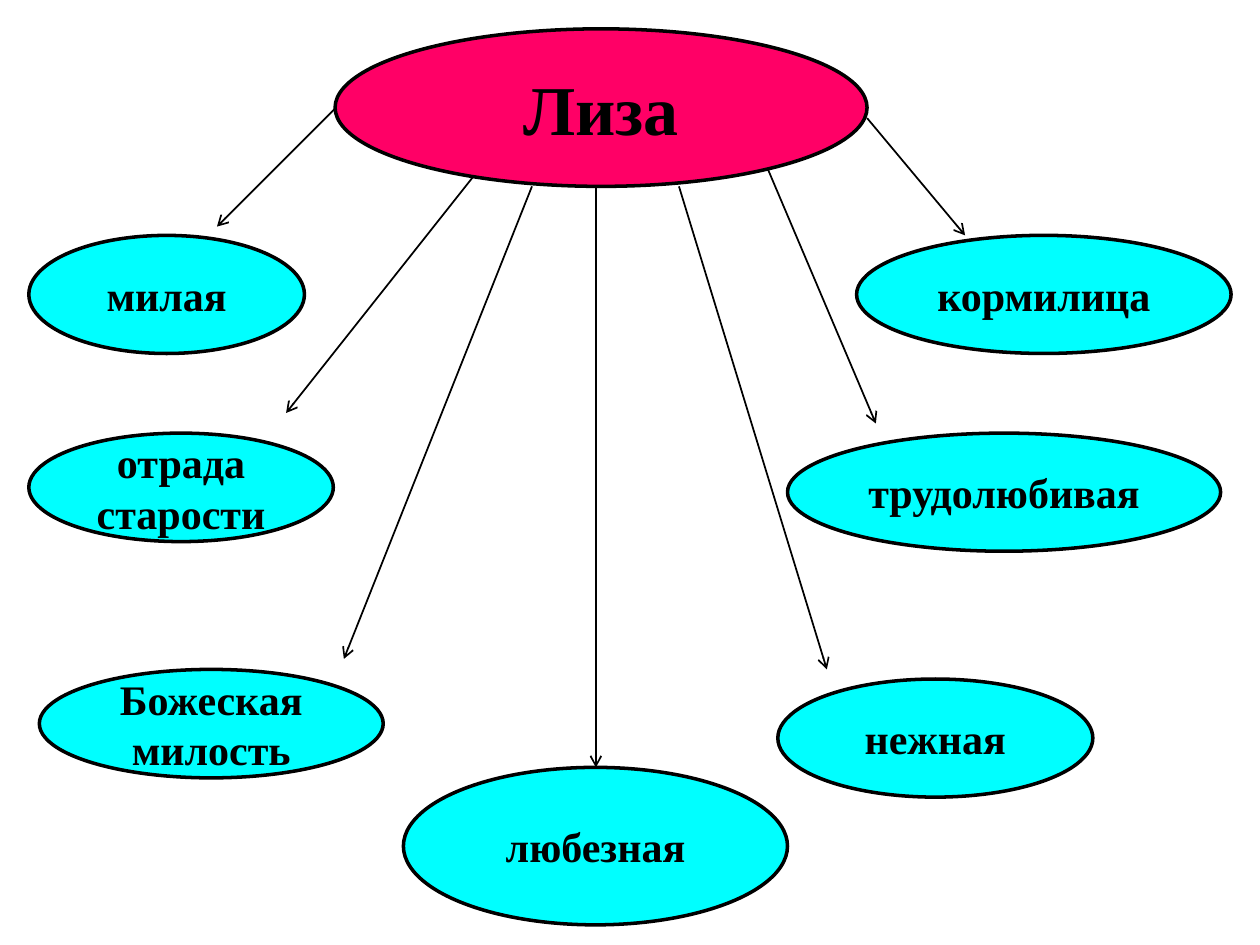
from pptx import Presentation
from pptx.dml.color import RGBColor
from pptx.enum.shapes import MSO_CONNECTOR, MSO_SHAPE
from pptx.enum.text import MSO_ANCHOR, PP_ALIGN
from pptx.oxml.ns import qn
from pptx.util import Pt
from lxml import etree

OVAL = MSO_SHAPE.OVAL
LINE = MSO_CONNECTOR.STRAIGHT
MIDDLE = MSO_ANCHOR.MIDDLE
CENTER = PP_ALIGN.CENTER
BLACK = RGBColor(0, 0, 0)
PINK = RGBColor(255, 0, 102)
CYAN = RGBColor(0, 255, 255)

TRAITS = [
    ("трудолюбивая", 450, 247.5, 247.5, 67.5),
    ("кормилица", 489.5, 134.5, 214, 67.5),
    ("Божеская милость", 22.5, 382.5, 196.5, 62),
    ("отрада старости", 16.5, 247.5, 174, 62),
    ("милая", 16.5, 134.5, 157.5, 67.5),
    ("любезная", 230.5, 438.5, 219.5, 90),
    ("нежная", 444.5, 388, 180, 67.5),
]
ARROWS = [
    (191.5, 62, 124, 129.5),
    (270, 101.5, 163.5, 236),
    (304, 106.5, 196.5, 376.5),
    (340.5, 106.5, 340.5, 438.5),
    (495.5, 67.5, 551.5, 134.5),
    (438.5, 96, 500.5, 242),
    (388, 106.5, 472.5, 382.5),
]


class Sketch:
    """Draws the ovals and arrows of a word map on one slide."""

    font = "Times New Roman"

    def __init__(self, slide):
        self.slide = slide

    def oval(self, text, left, top, width, height, fill=CYAN, size=24):
        shape = self.slide.shapes.add_shape(OVAL, Pt(left), Pt(top), Pt(width), Pt(height))
        shape.shadow.inherit = False
        shape.fill.solid()
        shape.fill.fore_color.rgb = fill
        shape.line.color.rgb = BLACK
        shape.line.width = Pt(2)
        frame = shape.text_frame
        frame.word_wrap = True
        frame.vertical_anchor = MIDDLE
        para = frame.paragraphs[0]
        para.alignment = CENTER
        run = para.add_run()
        run.text = text
        run.font.name = self.font
        run.font.size = Pt(size)
        run.font.bold = True
        run.font.color.rgb = BLACK

    def arrow(self, *ends):
        link = self.slide.shapes.add_connector(LINE, *map(Pt, ends))
        link.line.color.rgb = BLACK
        link.line.width = Pt(1)
        etree.SubElement(link.line._get_or_add_ln(), qn("a:tailEnd"), type="arrow")
        etree.SubElement(link._element.spPr, qn("a:effectLst"))


def main():
    deck = Presentation()
    deck.slide_width, deck.slide_height = Pt(720), Pt(540)
    sketch = Sketch(deck.slides.add_slide(deck.slide_layouts[6]))
    sketch.oval("Лиза", 191.5, 16.5, 304, 90, PINK, 40)
    for trait in TRAITS:
        sketch.oval(*trait)
    for ends in ARROWS:
        sketch.arrow(*ends)
    deck.save("out.pptx")


if __name__ == "__main__":
    main()
